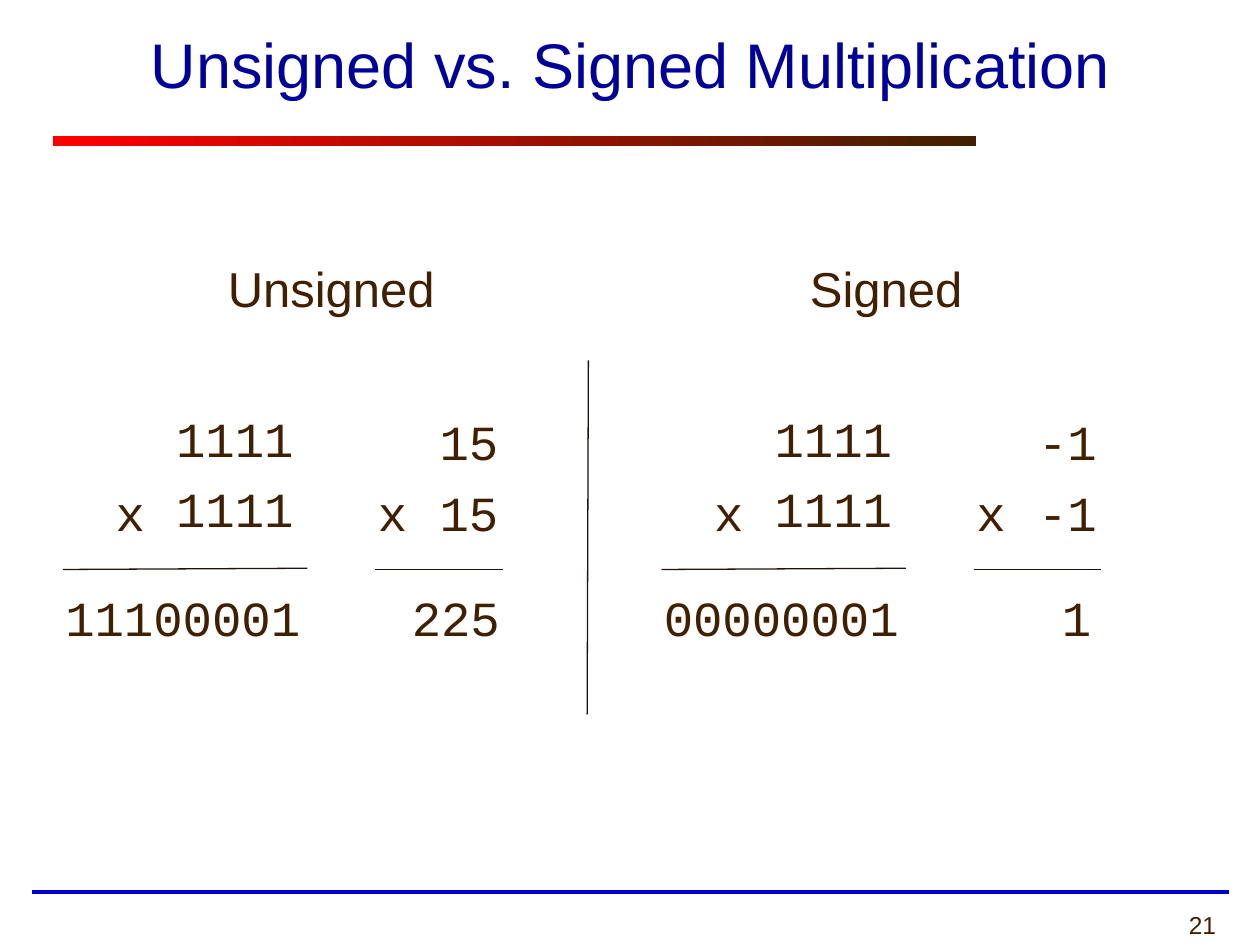
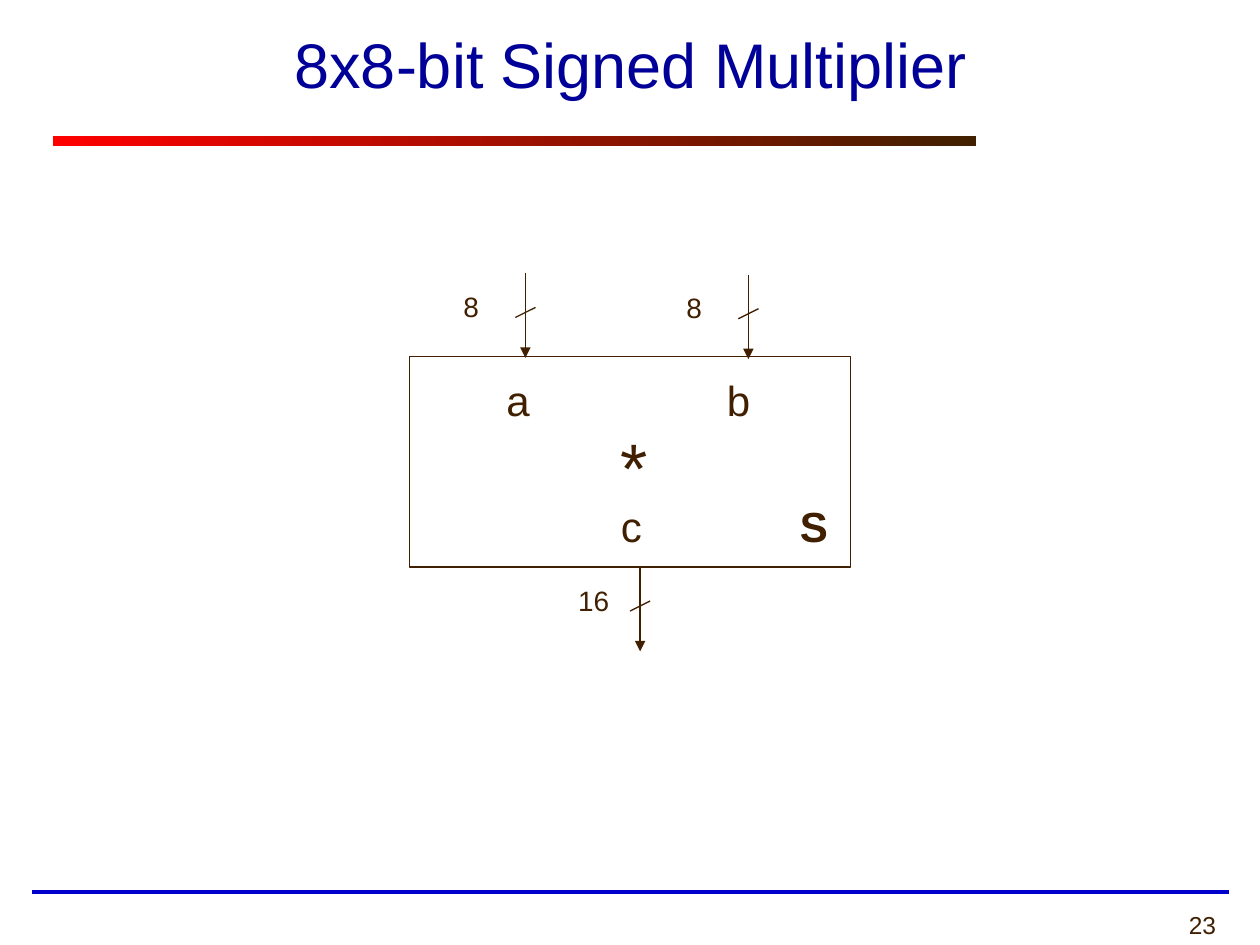
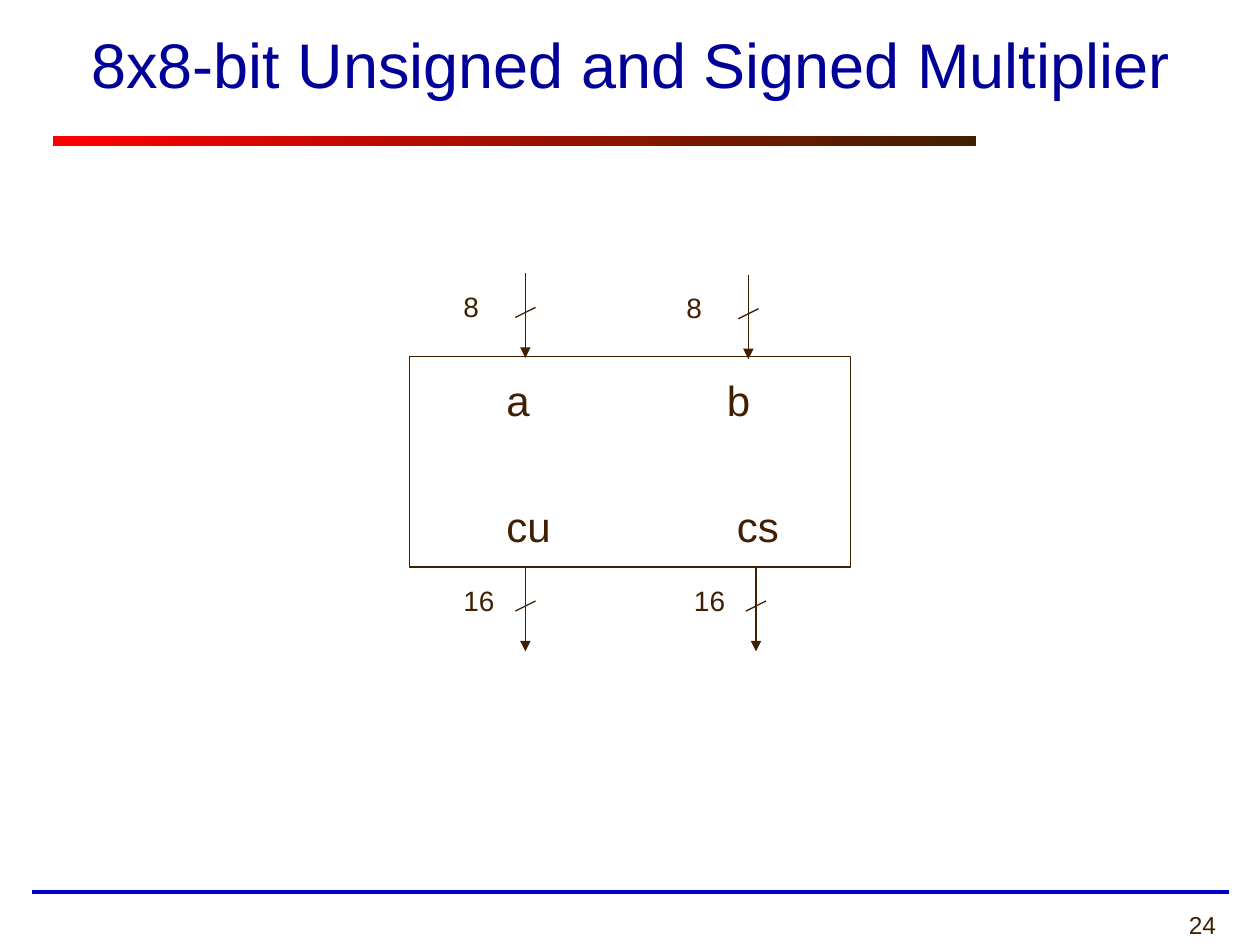
"""Builds three slides on unsigned and signed binary multiplication."""
from dataclasses import dataclass

from lxml import etree
from pptx import Presentation
from pptx import util as u
from pptx.dml.color import RGBColor
from pptx.enum import shapes, text
from pptx.oxml import ns


@dataclass(frozen=True)
class Theme:
    ink: str = "402000"
    rule: str = "1D130C"
    title: str = "000099"
    footer: str = "0000CC"
    accent: str = "FF0000"
    sans: str = "Arial"
    mono: str = "Courier New"
    title_size: int = 36
    operator_size: int = 40
    body_size: int = 28
    port_size: int = 24
    width_size: int = 16
    number_size: int = 14
    thin: float = 0.75
    thick: float = 2.25


THEME = Theme()

PRODUCTS = {
    "title": "Unsigned vs. Signed Multiplication",
    "number": 21,
    "halves": [
        {"heading": ("Unsigned", 1.71), "binary": "1111", "decimal": "15",
         "binary_product": "11100001", "decimal_product": ("225", 3.17)},
        {"heading": ("Signed", 1.58), "binary": "1111", "decimal": "-1",
         "binary_product": "00000001", "decimal_product": ("1", 3.58)},
    ],
}

INPUTS = [("8", 4.17, 2.17), ("8", 5.94, 2.18)]
INPUT_PORTS = [("a", 3.92, 2.92), ("b", 5.67, 2.92)]
MULTIPLIERS = [
    {"title": "8x8-bit Signed Multiplier", "number": 23,
     "signals": INPUTS + [("16", 5.08, 4.5)],
     "ports": INPUT_PORTS + [("c", 4.83, 3.92)],
     "marks": [("S", 6.25, 3.92, THEME.port_size, True),
               ("*", 4.83, 3.31, THEME.operator_size, False)]},
    {"title": "8x8-bit Unsigned and Signed Multiplier", "number": 24,
     "signals": INPUTS + [("16", 4.17, 4.5), ("16", 6, 4.5)],
     "ports": INPUT_PORTS + [("cu", 3.92, 3.92), ("cs", 5.75, 3.92)],
     "marks": []},
]

HALF_PITCH = 4.75
ARROW_LENGTH = 0.67


def inches(*lengths):
    return [u.Inches(length) for length in lengths]


def style(span, size, color=THEME.ink, font=THEME.sans, bold=False):
    span.font.size = u.Pt(size)
    span.font.name = font
    span.font.bold = bold
    span.font.color.rgb = RGBColor.from_string(color)


def add_text(page, lines, left, top, width, size, font=THEME.sans, bold=False,
             align=text.PP_ALIGN.LEFT):
    height = 0.1 + len(lines) * size * 1.34 / 72
    frame = page.shapes.add_textbox(*inches(left, top, width, height)).text_frame
    frame.word_wrap = True
    for index, line in enumerate(lines):
        para = frame.add_paragraph() if index else frame.paragraphs[0]
        para.alignment = align
        para.space_before = u.Pt(round(0.24 * size, 1))
        span = para.add_run()
        span.text = line
        style(span, size, font=font, bold=bold)


def add_line(page, start, end, color=THEME.ink, weight=THEME.thin, arrow=False):
    line = page.shapes.add_connector(
        shapes.MSO_CONNECTOR.STRAIGHT, *inches(*start, *end))
    line.line.color.rgb = RGBColor.from_string(color)
    line.line.width = u.Pt(weight)
    if arrow:
        etree.SubElement(line.line._get_or_add_ln(), ns.qn("a:tailEnd"), type="triangle")
    etree.SubElement(line._element.spPr, ns.qn("a:effectLst"))


def add_page(deck, title, number):
    page = deck.slides.add_slide(deck.slide_layouts[5])
    heading = page.shapes.title
    heading.left, heading.top, heading.width, heading.height = inches(0.42, 0, 9.17, 1)
    heading.text_frame.vertical_anchor = text.MSO_ANCHOR.MIDDLE
    para = heading.text_frame.paragraphs[0]
    para.alignment = text.PP_ALIGN.CENTER
    span = para.add_run()
    span.text = title
    style(span, THEME.title_size, THEME.title)

    band = page.shapes.add_shape(
        shapes.MSO_SHAPE.RECTANGLE, *inches(0.42, 1.08, 7.33, 0.08))
    band.shadow.inherit = False
    band.line.fill.background()
    band.fill.gradient()
    band.fill.gradient_angle = 0
    for stop, color in zip(band.fill.gradient_stops, (THEME.accent, THEME.ink)):
        stop.color.rgb = RGBColor.from_string(color)

    add_line(page, (0.25, 7.08), (9.75, 7.08), THEME.footer, THEME.thick)
    add_text(page, [str(number)], 7.58, 7.17, 2.17, THEME.number_size,
             align=text.PP_ALIGN.RIGHT)
    return page


def add_products(deck, content):
    page = add_page(deck, content["title"], content["number"])
    add_line(page, (4.67, 2.86), (4.66, 5.67), THEME.rule)
    for index, half in enumerate(content["halves"]):
        shift = index * HALF_PITCH
        heading, heading_left = half["heading"]
        product, product_left = half["decimal_product"]
        add_text(page, [heading], shift + heading_left, 2, 1.9, THEME.body_size)
        for lines, left, top, width in [
            ([half["binary"]] * 2, 1.3, 3.19, 1.2),
            (["x"], 0.82, 3.78, 0.45),
            ([half["binary_product"]], 0.42, 4.61, 2.15),
            ([half["decimal"]] * 2, 3.39, 3.22, 0.7),
            (["x"], 2.9, 3.78, 0.45),
            ([product], product_left, 4.61, 0.95),
        ]:
            add_text(page, lines, shift + left, top, width, THEME.body_size, THEME.mono)
        add_line(page, (shift + 0.5, 4.52), (shift + 2.44, 4.51), THEME.rule)
        add_line(page, (shift + 2.98, 4.52), (shift + 3.99, 4.52), THEME.rule)


def add_signal(page, bits, x, top):
    add_line(page, (x, top), (x, top + ARROW_LENGTH), arrow=True)
    add_line(page, (x - 0.08, top + 0.35), (x + 0.08, top + 0.27))
    add_text(page, [bits], x - 0.59, top + 0.08, 0.5, THEME.width_size)


def add_multiplier(deck, content):
    page = add_page(deck, content["title"], content["number"])
    block = page.shapes.add_shape(
        shapes.MSO_SHAPE.RECTANGLE, *inches(3.25, 2.83, 3.5, 1.67))
    block.shadow.inherit = False
    block.fill.background()
    block.line.color.rgb = RGBColor.from_string(THEME.ink)
    block.line.width = u.Pt(THEME.thin)
    for signal in content["signals"]:
        add_signal(page, *signal)
    for name, left, top in content["ports"]:
        add_text(page, [name], left, top, 0.6, THEME.port_size)
    for mark, left, top, size, bold in content["marks"]:
        add_text(page, [mark], left, top, 0.45, size, bold=bold)


def main():
    deck = Presentation()
    deck.slide_width, deck.slide_height = inches(10, 7.5)
    add_products(deck, PRODUCTS)
    for content in MULTIPLIERS:
        add_multiplier(deck, content)
    deck.save("out.pptx")


if __name__ == "__main__":
    main()
